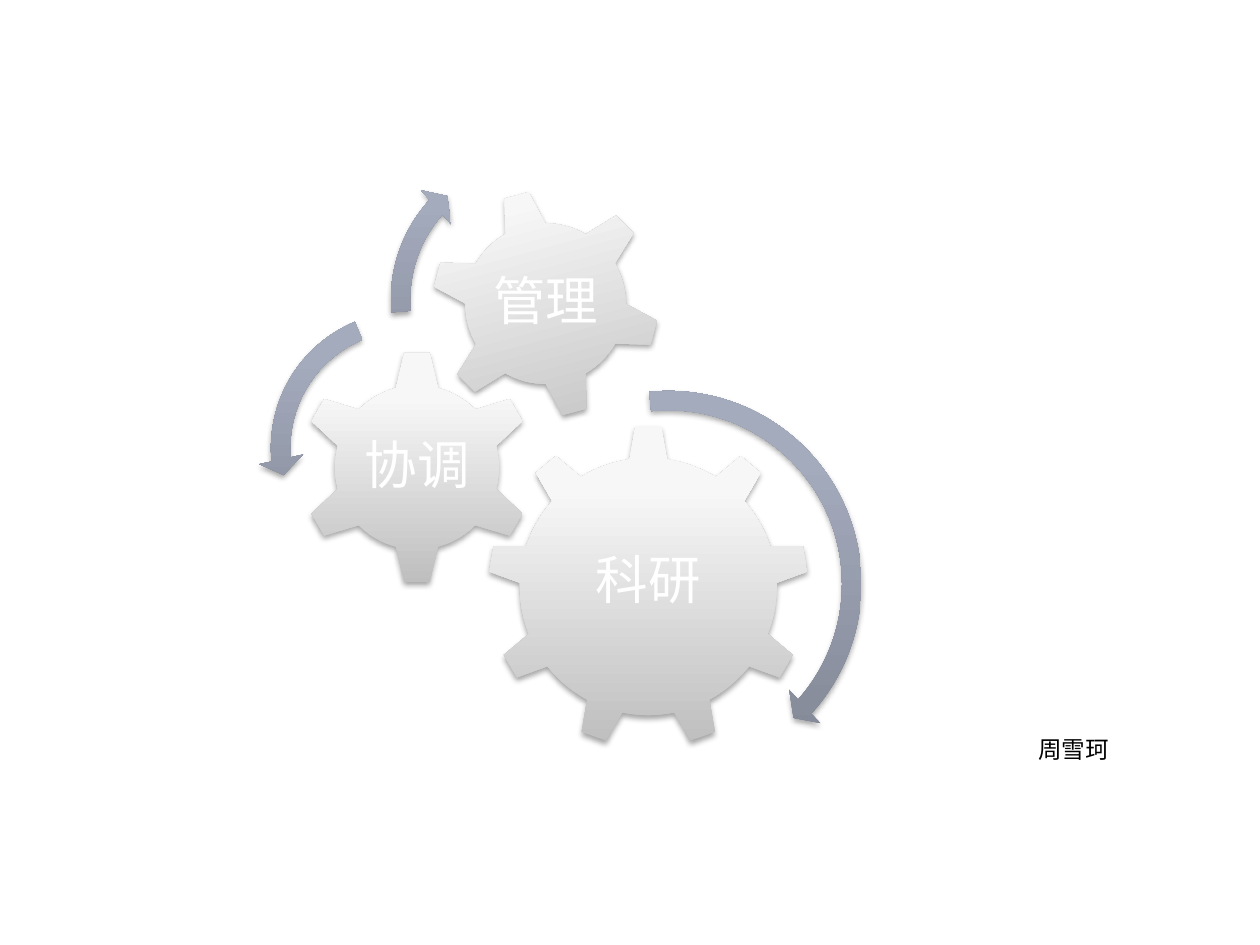
from copy import deepcopy

from lxml.etree import SubElement
from pptx import Presentation
from pptx.dml.color import RGBColor
from pptx.enum.shapes import MSO_SHAPE
from pptx.enum.text import MSO_ANCHOR, MSO_AUTO_SIZE, PP_ALIGN
from pptx.oxml.ns import qn
from pptx.util import Inches, Pt

WHITE = RGBColor(0xFF, 0xFF, 0xFF)
BLACK = RGBColor(0x00, 0x00, 0x00)
GREY_STOPS = [
    (0, RGBColor(0xBE, 0xBE, 0xBE)),
    (0.8, RGBColor(0xF7, 0xF7, 0xF7)),
    (1, RGBColor(0xF8, 0xF8, 0xF8)),
]
BLUE_STOPS = [
    (0, RGBColor(0x7E, 0x83, 0x91)),
    (0.8, RGBColor(0xA4, 0xAB, 0xBC)),
    (1, RGBColor(0xA4, 0xAB, 0xBE)),
]
FONT = "Calibri"

# label, preset, left, top, size, rotation, label size, label rise
GEARS = [
    ("科研", MSO_SHAPE.GEAR_9, 3.87, 3.38, 2.55, 0, 1.4, 0.03),
    ("协调", MSO_SHAPE.GEAR_6, 2.38, 2.78, 1.86, 0, 0.92, 0),
    ("管理", MSO_SHAPE.GEAR_6, 3.42, 1.5, 1.82, 345, 1.02, 0),
]
# preset, left, top, size, adjustments
ARROWS = [
    (MSO_SHAPE.CIRCULAR_ARROW, 3.67, 3, 3.27,
     (0.047, 2.99, 25.174, 158.585, 0.055)),
    (MSO_SHAPE.LEFT_CIRCULAR_ARROW, 2.05, 2.37, 2.37,
     (0.065, 4.3, 104.891, 148.378, 0.075)),
    (MSO_SHAPE.CIRCULAR_ARROW, 3, 1.1, 2.56,
     (0.06, 3.941, 133.138, 105.082, 0.07)),
]
AUTHOR = "周雪珂"


def add_gradient(shape, stops):
    shape.fill.gradient()
    shape.fill.gradient_angle = 90
    stop_list = shape.element.spPr.find(".//" + qn("a:gsLst"))
    while len(stop_list) < len(stops):
        stop_list.append(deepcopy(stop_list[-1]))
    for stop, (position, color) in zip(shape.fill.gradient_stops, stops):
        stop.position = position
        stop.color.rgb = color


def add_shadow(shape):
    shape.shadow.inherit = False
    effects = shape.element.spPr.find(qn("a:effectLst"))
    shadow = SubElement(effects, qn("a:outerShdw"), blurRad="40000",
                        dist="23000", dir="5400000", rotWithShape="0")
    color = SubElement(shadow, qn("a:srgbClr"), val="000000")
    SubElement(color, qn("a:alpha"), val="35000")


def add_part(group, preset, left, top, size, stops):
    shape = group.shapes.add_shape(
        preset, Inches(left), Inches(top), Inches(size), Inches(size))
    add_gradient(shape, stops)
    shape.line.fill.background()
    add_shadow(shape)
    return shape


def add_text(shapes, text, left, top, width, height, size, color):
    box = shapes.add_textbox(
        Inches(left), Inches(top), Inches(width), Inches(height))
    frame = box.text_frame
    frame.text = text
    font = frame.paragraphs[0].font
    font.name = FONT
    font.size = Pt(size)
    font.color.rgb = color
    return frame


def add_gear(group, label, preset, left, top, size, rotation, side, rise):
    gear = add_part(group, preset, left, top, size, GREY_STOPS)
    gear.rotation = rotation
    inset = (size - side) / 2
    frame = add_text(group.shapes, label, left + inset, top + inset - rise,
                     side, side, 30, WHITE)
    frame.word_wrap = True
    frame.vertical_anchor = MSO_ANCHOR.MIDDLE
    frame.margin_left = frame.margin_right = Inches(0.04)
    frame.margin_top = frame.margin_bottom = Inches(0.04)
    frame.paragraphs[0].alignment = PP_ALIGN.CENTER
    frame.paragraphs[0].line_spacing = 0.9


def main():
    deck = Presentation()
    deck.slide_width, deck.slide_height = Inches(10), Inches(7.5)
    page = deck.slides.add_slide(deck.slide_layouts[6])
    group = page.shapes.add_group_shape()
    for gear in GEARS:
        add_gear(group, *gear)
    for preset, left, top, size, adjustments in ARROWS:
        arrow = add_part(group, preset, left, top, size, BLUE_STOPS)
        for index, value in enumerate(adjustments):
            arrow.adjustments[index] = value
    frame = add_text(page.shapes, AUTHOR, 8.14, 5.78, 0.91, 0.33, 13.5, BLACK)
    frame.auto_size = MSO_AUTO_SIZE.SHAPE_TO_FIT_TEXT
    deck.save("out.pptx")


if __name__ == "__main__":
    main()
